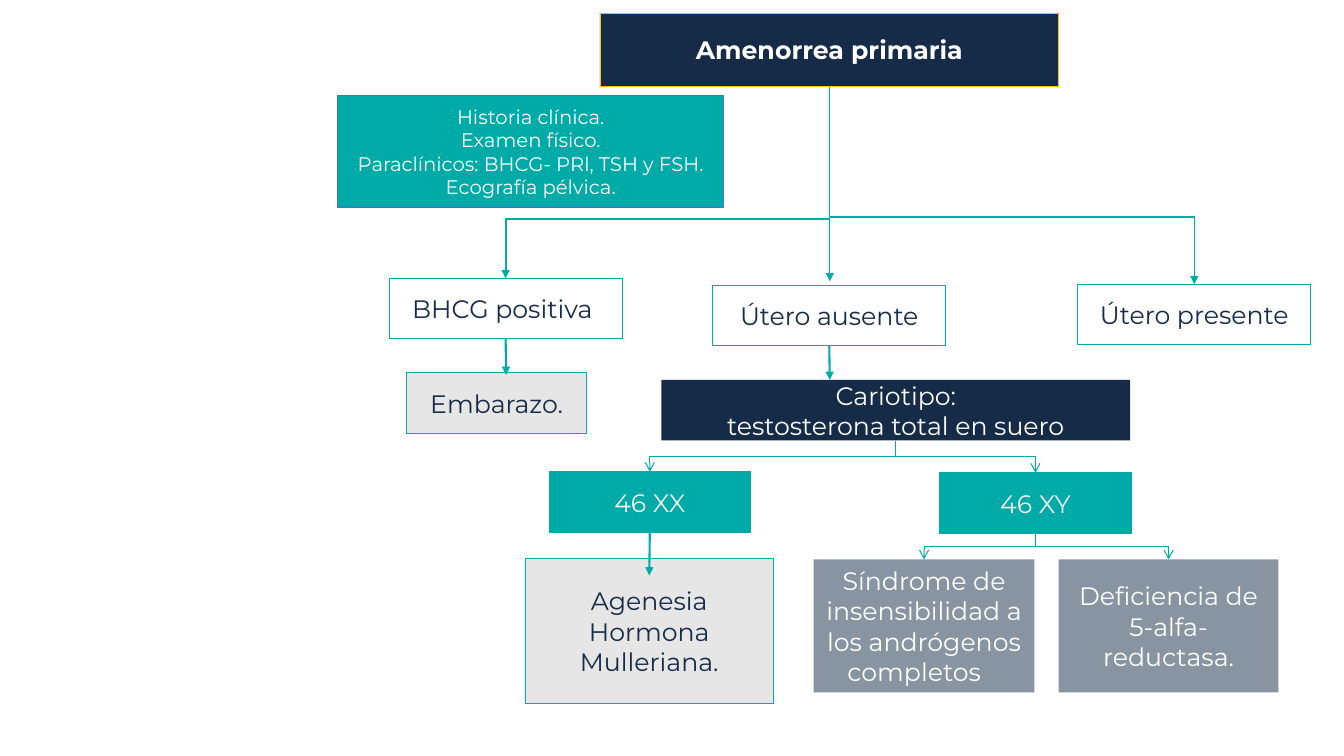
import pptx
import pptx.dml.color
import pptx.enum.shapes
import pptx.enum.text
import pptx.oxml
import pptx.oxml.ns
import pptx.util

Inches = pptx.util.Inches
RGBColor = pptx.dml.color.RGBColor
CONNECTOR = pptx.enum.shapes.MSO_CONNECTOR
qn = pptx.oxml.ns.qn

NAVY = RGBColor(0x15, 0x2B, 0x48)
TEAL = RGBColor(0x00, 0xAA, 0xA7)
GREY = RGBColor(0xE7, 0xE6, 0xE6)
WHITE = RGBColor(0xFF, 0xFF, 0xFF)
OFF_WHITE = RGBColor(0xF2, 0xF2, 0xF2)
GOLD = RGBColor(0xFF, 0xC0, 0x00)
BLUE = RGBColor(0x44, 0x72, 0xC4)

TOP, BOTTOM = 0, 2
ROW_HEIGHT = 0.6

# Looks shared by the boxes of the flowchart
OUTLINED = {"line": TEAL, "color": NAVY}
RESULT = {"fill": GREY, "line": TEAL, "color": NAVY}
KARYOTYPE = {"fill": TEAL, "line": TEAL, "color": OFF_WHITE}
DIAGNOSIS = {"fill": NAVY, "alpha": 50, "color": WHITE}


class Flowchart:
    """Draws boxes and arrows in one style on the current slide."""

    font = {"name": "Montserrat", "bold": False}
    frame = {"word_wrap": True, "vertical_anchor": pptx.enum.text.MSO_ANCHOR.MIDDLE}

    def __init__(self, slide):
        self.slide = slide

    def box(self, place, lines, color, fill=None, line=None, line_width=0.75,
            alpha=None, size=18, bold=False):
        shape = self.slide.shapes.add_shape(
            pptx.enum.shapes.MSO_SHAPE.RECTANGLE, *map(Inches, place))
        shape.shadow.inherit = False
        if fill is None:
            shape.fill.background()
        else:
            shape.fill.solid()
            shape.fill.fore_color.rgb = fill
        if alpha is not None:
            fill_color = shape._element.spPr.find(qn("a:solidFill"))[0]
            pptx.oxml.ns  # namespace helpers are used by qn
            fill_color.append(pptx.oxml.parse_xml(
                f'<a:alpha {pptx.oxml.ns.nsdecls("a")} val="{alpha * 1000}"/>'))
        if line is None:
            shape.line.fill.background()
        else:
            shape.line.color.rgb = line
            shape.line.width = pptx.util.Pt(line_width)

        text_frame = shape.text_frame
        for name, value in self.frame.items():
            setattr(text_frame, name, value)
        text_frame.text = "\n".join(lines)
        font_values = {**self.font, "size": pptx.util.Pt(size), "bold": bold}
        for paragraph in text_frame.paragraphs:
            paragraph.alignment = pptx.enum.text.PP_ALIGN.CENTER
            for run in paragraph.runs:
                for name, value in font_values.items():
                    setattr(run.font, name, value)
                run.font.color.rgb = color
        return shape

    def connector(self, kind, start, end, width, head="triangle"):
        connector = self.slide.shapes.add_connector(kind, *map(Inches, start + end))
        connector.line.color.rgb = TEAL
        connector.line.width = pptx.util.Pt(width)
        declaration = pptx.oxml.ns.nsdecls("a")
        connector.line._get_or_add_ln().append(
            pptx.oxml.parse_xml(f'<a:tailEnd {declaration} type="{head}"/>'))
        connector._element.spPr.append(
            pptx.oxml.parse_xml(f"<a:effectLst {declaration}/>"))
        return connector

    def straight(self, start, end, width=1.5):
        return self.connector(CONNECTOR.STRAIGHT, start, end, width)

    def corner(self, start, end, width=1.5):
        """Runs sideways, then down, with a single bend."""
        connector = self.connector(CONNECTOR.ELBOW, start, end, width)
        connector._element.spPr.find(qn("a:prstGeom")).set("prst", "bentConnector2")
        return connector

    def branch(self, parent, child, width=0.75, head="arrow", bend=0.5):
        """Runs down, sideways and down again from parent to child."""
        connector = self.connector(CONNECTOR.ELBOW, (0, 0), (1, 1), width, head)
        connector.begin_connect(parent, BOTTOM)
        connector.end_connect(child, TOP)
        start_x, start_y = connector.begin_x, connector.begin_y
        end_x, end_y = connector.end_x, connector.end_y
        drop, reach = end_y - start_y, abs(end_x - start_x)
        # The frame is a quarter turn of the drawn path around its centre
        geometry = {"left": (start_x + end_x - drop) // 2,
                    "top": (start_y + end_y - reach) // 2,
                    "width": drop, "height": reach}
        for name, value in geometry.items():
            setattr(connector, name, value)
        to_right = end_x > start_x
        transform = connector._element.spPr.find(qn("a:xfrm"))
        transform.set("rot", str((270 if to_right else 90) * 60000))
        transform.set("flipH", "1" if to_right else "0")
        transform.set("flipV", "0")
        guides = connector._element.spPr.find(qn("a:prstGeom")).get_or_add_avLst()
        guides.append(pptx.oxml.parse_xml(
            f'<a:gd {pptx.oxml.ns.nsdecls("a")} name="adj1" '
            f'fmla="val {round(bend * 100000)}"/>'))
        return connector


def main():
    presentation = pptx.Presentation()
    presentation.slide_width = Inches(13.33)
    presentation.slide_height = Inches(7.5)
    chart = Flowchart(presentation.slides.add_slide(presentation.slide_layouts[6]))

    # Starting point and first studies
    amenorrhea = chart.box((5.95, 0.13, 4.55, 0.73), ["Amenorrea primaria"],
                           WHITE, NAVY, GOLD, 0.5, bold=True)
    chart.box((3.35, 0.95, 3.83, 1.11),
              ["Historia clínica.", "Examen físico.",
               "Paraclínicos: BHCG- PRl, TSH y FSH.", "Ecografía pélvica."],
              WHITE, TEAL, BLUE, 0.5, size=14)

    # Findings
    pregnancy_test = chart.box((3.86, 2.76, 2.31, ROW_HEIGHT), ["BHCG positiva "], **OUTLINED)
    uterus_absent = chart.box((7.07, 2.83, 2.31, ROW_HEIGHT), ["Útero ausente"], **OUTLINED)
    uterus_present = chart.box((10.69, 2.82, 2.31, ROW_HEIGHT), ["Útero presente"], **OUTLINED)
    chart.box((4.03, 3.7, 1.79, ROW_HEIGHT), ["Embarazo."], **RESULT)

    # Karyotype
    karyotype = chart.box((6.56, 3.77, 4.65, ROW_HEIGHT),
                          ["Cariotipo:", " testosterona total en suero "], WHITE, NAVY)
    xx = chart.box((5.45, 4.68, 1.99, ROW_HEIGHT), ["46 XX"], **KARYOTYPE)
    xy = chart.box((9.32, 4.69, 1.9, ROW_HEIGHT), ["46 XY"], **KARYOTYPE)

    # Diagnoses
    chart.box((5.21, 5.54, 2.46, 1.44), ["Agenesia Hormona Mulleriana."], **RESULT)
    insensitivity = chart.box(
        (8.07, 5.55, 2.19, 1.32),
        ["Síndrome de insensibilidad a los andrógenos completos   "], **DIAGNOSIS)
    deficiency = chart.box((10.5, 5.55, 2.18, 1.32),
                           ["Deficiencia de 5-alfa-reductasa."], **DIAGNOSIS)

    # Branching arrows
    chart.branch(amenorrhea, uterus_present, 1, "triangle", bend=0.66)
    chart.corner((8.23, 2.17), (5.02, 2.76)).end_connect(pregnancy_test, TOP)
    for parent, child in ((karyotype, xx), (karyotype, xy),
                          (xy, insensitivity), (xy, deficiency)):
        chart.branch(parent, child)

    # Straight arrows
    chart.straight((8.23, 2.17), (8.23, 2.79), 1)
    for parent, start, end in ((pregnancy_test, (5.02, 3.36), (5.02, 3.72)),
                               (uterus_absent, (8.23, 3.43), (8.23, 3.77)),
                               (xx, (6.44, 5.28), (6.44, 5.71))):
        chart.straight(start, end).begin_connect(parent, BOTTOM)

    presentation.save("out.pptx")


if __name__ == "__main__":
    main()
